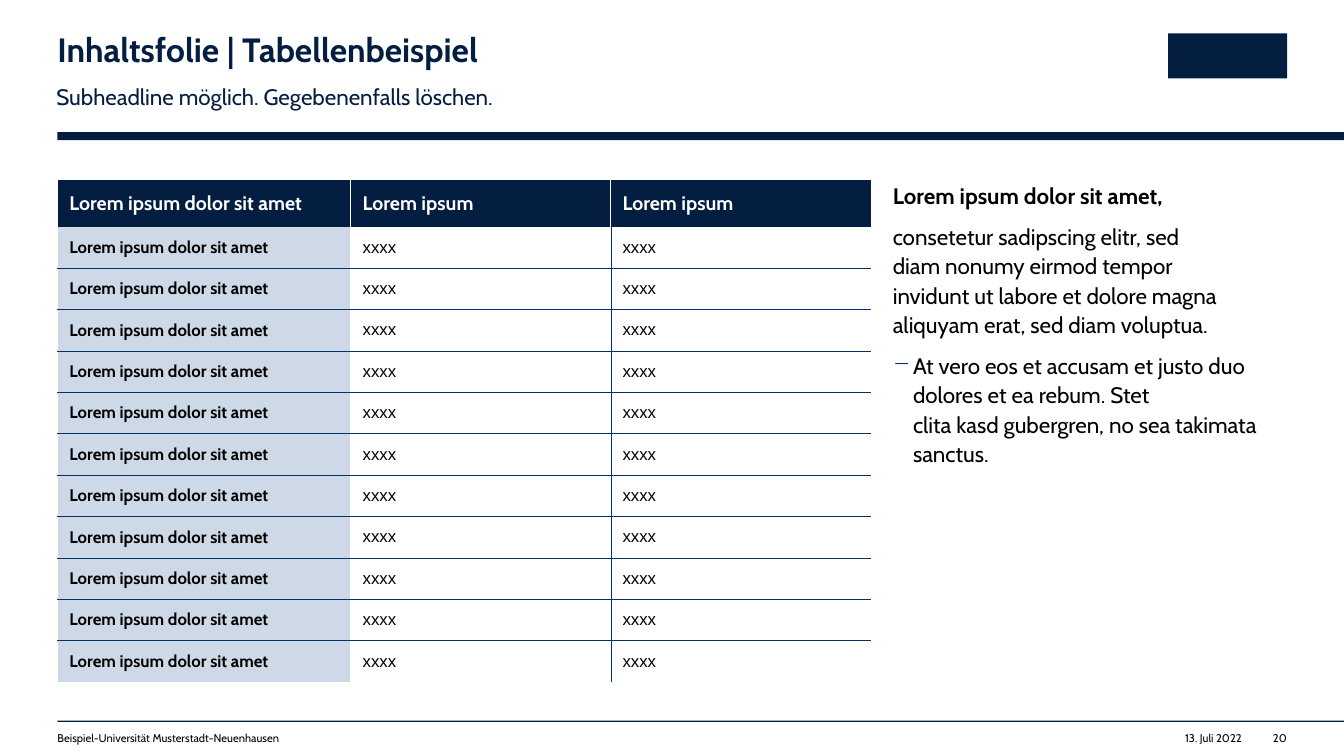
import copy

import pptx
import pptx.dml.color
import pptx.enum.shapes
import pptx.enum.text
import pptx.oxml
import pptx.oxml.ns
import pptx.util

Cm = pptx.util.Cm
Pt = pptx.util.Pt
RGBColor = pptx.dml.color.RGBColor
ALIGN = pptx.enum.text.PP_ALIGN
qn = pptx.oxml.ns.qn

NAVY = RGBColor(0x04, 0x1E, 0x42)
BLUE = RGBColor(0x04, 0x31, 0x6A)
PALE = RGBColor(0xCE, 0xD9, 0xE7)
WHITE = RGBColor(0xFF, 0xFF, 0xFF)
BLACK = RGBColor(0, 0, 0)

TITLE = "Inhaltsfolie | Tabellenbeispiel"
SUBHEADLINE = "Subheadline möglich. Gegebenenfalls löschen."
INSTITUTION = "Beispiel-Universität Musterstadt-Neuenhausen"
DATE = "13. Juli 2022"
PAGE = "20"
HEADER = ["Lorem ipsum dolor sit amet", "Lorem ipsum", "Lorem ipsum"]
ROWS = [["Lorem ipsum dolor sit amet", "xxxx", "xxxx"]] * 11
BODY = [
    {"text": "Lorem ipsum dolor sit amet,", "bold": True},
    {"text": "consetetur sadipscing elitr, sed \vdiam nonumy eirmod tempor \v"
             "invidunt ut labore et dolore magna aliquyam erat, sed diam voluptua."},
    {"text": "At vero eos et accusam et justo duo dolores et ea rebum. Stet \v"
             "clita kasd gubergren, no sea takimata sanctus.", "bullet": "−"},
]

SLIDE_WIDTH, SLIDE_HEIGHT = 33.87, 19.05
LEFT = 1.45
CONTENT_TOP = 4.52
COLUMN_WIDTHS = [7.39, 6.55, 6.55]
TABLE_HEIGHT, HEADER_HEIGHT = 12.67, 1.19
ROW_HEIGHT = (TABLE_HEIGHT - HEADER_HEIGHT) / len(ROWS)
RULE_WIDTH = SLIDE_WIDTH - LEFT
FOOTER_TOP, FOOTER_HEIGHT = 18.44, 0.33


def style_runs(paragraph, size, color, bold=False, font="Cabin"):
    for run in paragraph.runs:
        run.font.name = font
        run.font.size = Pt(size)
        run.font.bold = bold
        run.font.color.rgb = color
    for line_break in paragraph._p.findall(qn("a:br")):
        line_break.append(copy.deepcopy(paragraph.runs[0]._r.rPr))


def add_block(slide, left, top, width, height, color=NAVY):
    shape = slide.shapes.add_shape(
        pptx.enum.shapes.MSO_SHAPE.RECTANGLE, Cm(left), Cm(top), Cm(width), Cm(height))
    shape.shadow.inherit = False
    shape.fill.solid()
    shape.fill.fore_color.rgb = color
    shape.line.fill.background()


def add_frame(slide, left, top, width, height, insets=(0, 0, 0, 0), wrap=True):
    box = slide.shapes.add_textbox(Cm(left), Cm(top), Cm(width), Cm(height))
    frame = box.text_frame
    frame.word_wrap = wrap
    frame.margin_left, frame.margin_top, frame.margin_right, frame.margin_bottom = map(Cm, insets)
    return frame


def add_line(slide, text, place, size, color, bold=False, spacing=1.0,
             align=ALIGN.LEFT, insets=(0, 0, 0, 0), wrap=True):
    frame = add_frame(slide, *place, insets, wrap)
    frame.text = text
    paragraph = frame.paragraphs[0]
    paragraph.alignment = align
    paragraph.line_spacing = spacing
    style_runs(paragraph, size, color, bold)


def add_bullet(paragraph, symbol):
    properties = paragraph._p.get_or_add_pPr()
    properties.set("marL", str(Cm(0.51)))
    properties.set("indent", str(-Cm(0.51)))
    color = pptx.oxml.parse_xml(
        f'<a:buClr {pptx.oxml.ns.nsdecls("a")}><a:srgbClr val="{BLUE}"/></a:buClr>')
    bullet = pptx.oxml.parse_xml(
        f'<a:buChar {pptx.oxml.ns.nsdecls("a")} char="{symbol}"/>')
    properties.extend([color, bullet])


def add_body(slide):
    frame = add_frame(slide, 22.5, CONTENT_TOP, 9.93, 12.7, (0, 0, 0.5, 0))
    for index, item in enumerate(BODY):
        paragraph = frame.add_paragraph() if index else frame.paragraphs[0]
        paragraph.text = item["text"]
        paragraph.line_spacing = 1.1
        paragraph.space_after = Pt(8)
        if "bullet" in item:
            add_bullet(paragraph, item["bullet"])
        style_runs(paragraph, 16, BLACK, item.get("bold", False))


def vertical_border(row, edge):
    if edge == len(COLUMN_WIDTHS):
        return None
    if edge == 0:
        return WHITE, 1
    if row == 0:
        return WHITE, 0.5
    return (WHITE, 1) if edge == 1 else (BLUE, 0.25)


def horizontal_border(edge):
    if edge == 0:
        return WHITE, 1
    return (BLUE, 0.25) if 1 < edge <= len(ROWS) else None


def set_borders(cell, row, column):
    borders = {
        "lnL": vertical_border(row, column),
        "lnR": vertical_border(row, column + 1),
        "lnT": horizontal_border(row),
        "lnB": horizontal_border(row + 1),
    }
    properties = cell._tc.get_or_add_tcPr()
    for tag, border in borders.items():
        color, width = border or (None, 0)
        paint = f'<a:solidFill><a:srgbClr val="{color}"/></a:solidFill>' if border else "<a:noFill/>"
        properties.append(pptx.oxml.parse_xml(
            f'<a:{tag} {pptx.oxml.ns.nsdecls("a")} w="{Pt(width)}">{paint}</a:{tag}>'))


def add_table(slide):
    table = slide.shapes.add_table(
        len(ROWS) + 1, len(HEADER), Cm(LEFT), Cm(CONTENT_TOP),
        Cm(sum(COLUMN_WIDTHS)), Cm(TABLE_HEIGHT)).table
    table.first_row = False
    table.horz_banding = False
    for column, width in zip(table.columns, COLUMN_WIDTHS):
        column.width = Cm(width)
    for row_index, values in enumerate([HEADER] + ROWS):
        is_header = row_index == 0
        table.rows[row_index].height = Cm(HEADER_HEIGHT if is_header else ROW_HEIGHT)
        for column_index, value in enumerate(values):
            cell = table.cell(row_index, column_index)
            is_label = is_header or column_index == 0
            set_borders(cell, row_index, column_index)
            if is_label:
                cell.fill.solid()
                cell.fill.fore_color.rgb = NAVY if is_header else PALE
            else:
                cell.fill.background()
            cell.vertical_anchor = pptx.enum.text.MSO_ANCHOR.MIDDLE
            cell.margin_left = cell.margin_right = Cm(0.3)
            cell.margin_top = cell.margin_bottom = Cm(0.1)
            cell.text_frame.text = value
            style_runs(cell.text_frame.paragraphs[0], 14 if is_header else 12,
                       WHITE if is_header else BLACK, is_label,
                       "Cabin" if is_label else "Arial")


def main():
    presentation = pptx.Presentation()
    presentation.slide_width = Cm(SLIDE_WIDTH)
    presentation.slide_height = Cm(SLIDE_HEIGHT)
    slide = presentation.slides.add_slide(presentation.slide_layouts[6])

    add_block(slide, LEFT, 3.33, RULE_WIDTH, 0.2)
    add_block(slide, LEFT, 18.16, RULE_WIDTH, 0.03)
    add_block(slide, 29.44, 0.84, 3, 1.14)

    add_line(slide, DATE, (29.57, FOOTER_TOP, 1.73, FOOTER_HEIGHT), 8, BLACK,
             align=ALIGN.RIGHT, wrap=False)
    add_line(slide, INSTITUTION, (LEFT, FOOTER_TOP, 15.19, FOOTER_HEIGHT), 8, BLACK)
    add_line(slide, PAGE, (32, FOOTER_TOP, 0.43, FOOTER_HEIGHT), 8, BLACK,
             align=ALIGN.RIGHT, wrap=False)
    add_line(slide, SUBHEADLINE, (1.17, 1.9, 19.02, 0.69), 16, NAVY,
             spacing=1.1, insets=(0.25, 0.13, 0.25, 0.13))
    add_line(slide, TITLE, (LEFT, 0.84, 19.02, 0.91), 24, NAVY, bold=True, spacing=0.9)
    add_body(slide)
    add_table(slide)

    presentation.save("out.pptx")


if __name__ == "__main__":
    main()
